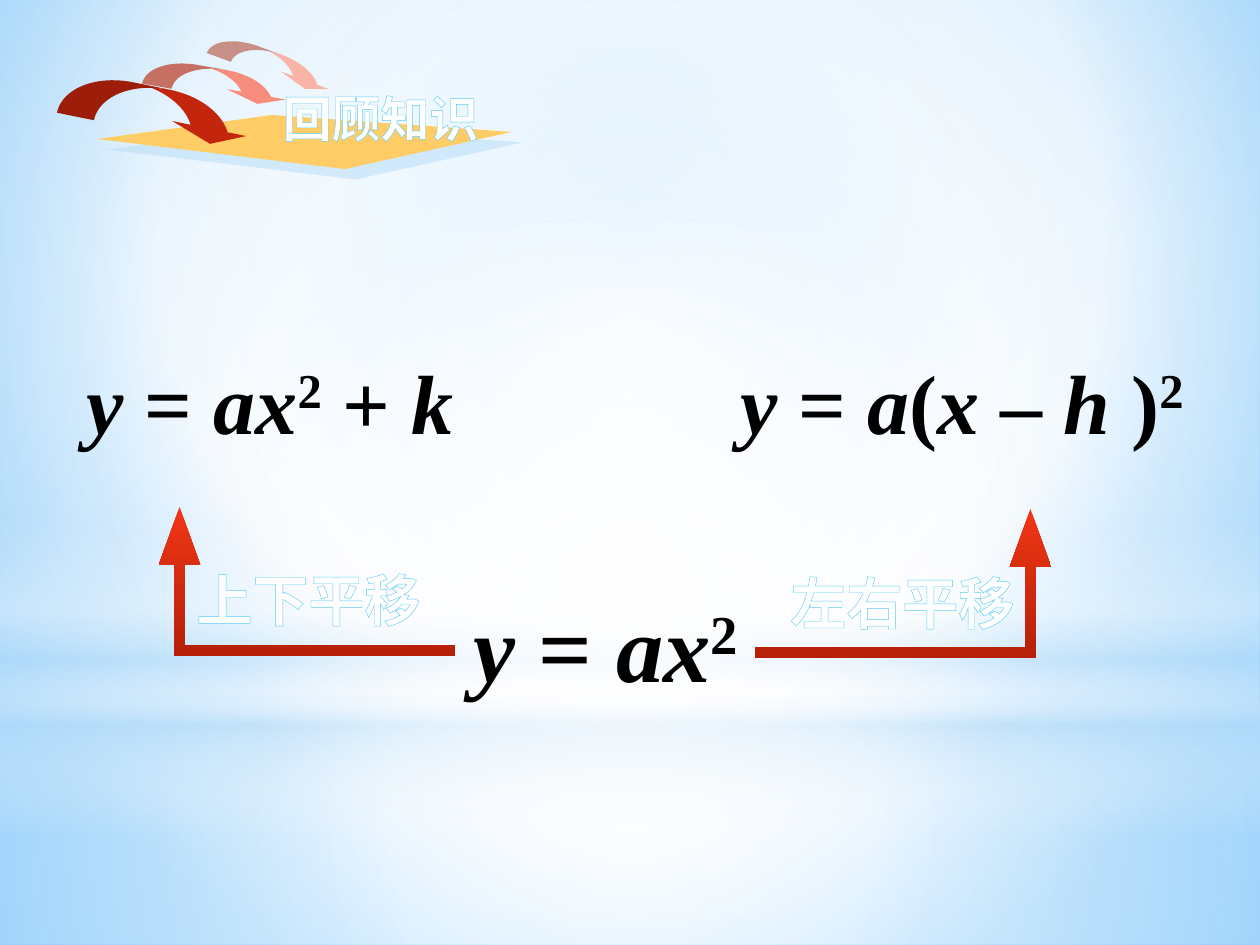
from dataclasses import dataclass

from lxml import etree
from pptx import Presentation
from pptx.dml.color import RGBColor
from pptx.enum.shapes import MSO_SHAPE
from pptx.enum.text import MSO_AUTO_SIZE, PP_ALIGN
from pptx.oxml.ns import qn
from pptx.util import Emu, Pt

PX = 914400 / 126
RECT, OVAL = MSO_SHAPE.RECTANGLE, MSO_SHAPE.OVAL
CURVED, BENT = MSO_SHAPE.CURVED_LEFT_ARROW, MSO_SHAPE.BENT_UP_ARROW
LEFT, CENTER, RIGHT = PP_ALIGN.LEFT, PP_ALIGN.CENTER, PP_ALIGN.RIGHT
FIT = MSO_AUTO_SIZE.SHAPE_TO_FIT_TEXT
MIDDLE = (50, 50, 50, 50)


@dataclass(frozen=True)
class Theme:
    """Colours, fonts and type sizes of the slide."""
    white: str = "FFFFFF"
    ink: str = "000000"
    sky: str = "9ED5FF"
    deep_sky: str = "5BB9FF"
    mist: str = "B4DCFA"
    outline: str = "5ECCF3"
    gold: str = "FFCC66"
    red: str = "C3260C"
    coral: str = "F78D7C"
    blush: str = "F9B3A7"
    arrow_top: str = "F03617"
    arrow_base: str = "B52007"
    math_font: str = "Times New Roman"
    text_font: str = "Noto Sans CJK SC"
    base_size: int = 54
    math_size: int = 48
    label_size: int = 32
    title_size: int = 28


T = Theme()


def px(*values):
    """Turn pixel lengths into EMU."""
    return [Emu(round(v * PX)) for v in values]


def child(parent, tag, **attrs):
    """Append an element with the given attributes."""
    el = etree.SubElement(parent, qn(tag))
    for name, value in attrs.items():
        el.set(name, str(value))
    return el


def add_color(parent, color, alpha=100):
    """Append an RGB colour with its opacity in percent."""
    clr = child(parent, "a:srgbClr", val=color)
    if alpha < 100:
        child(clr, "a:alpha", val=alpha * 1000)


def set_gradient(props, stops, focus=None):
    """Replace a solid fill by a radial or a vertical gradient."""
    grad = etree.Element(qn("a:gradFill"), rotWithShape="1")
    stop_list = child(grad, "a:gsLst")
    for pos, color, alpha in stops:
        add_color(child(stop_list, "a:gs", pos=pos * 1000), color, alpha)
    if focus:
        sides = {k: v * 1000 for k, v in zip("ltrb", focus)}
        child(child(grad, "a:path", path="circle"), "a:fillToRect", **sides)
    else:
        child(grad, "a:lin", ang=5400000, scaled=0)
    props.replace(props.find(qn("a:solidFill")), grad)


def set_plain(sp, color):
    """Give a shape a flat fill, no line and no shadow."""
    sp.shadow.inherit = False
    sp.fill.solid()
    sp.fill.fore_color.rgb = RGBColor.from_string(color)
    sp.line.fill.background()


def add_preset(shapes, kind, box, color=T.white, adjust=(), rotation=0):
    """Add a preset shape with a flat fill."""
    sp = shapes.add_shape(kind, *px(*box))
    set_plain(sp, color)
    for i, value in enumerate(adjust):
        sp.adjustments[i] = value
    sp.rotation = rotation
    return sp


def add_layer(shapes, kind, box, stops, focus=None):
    """Add a translucent gradient layer of the backdrop."""
    sp = add_preset(shapes, kind, box)
    set_gradient(sp.element.spPr, stops, focus)


def add_bent_arrow(shapes, box, flip=False):
    """Add a red arrow that turns upwards."""
    sp = add_preset(shapes, BENT, box, adjust=(0.072, 0.138, 0.386))
    set_gradient(sp.element.spPr, [(0, T.arrow_top, 100), (100, T.arrow_base, 100)])
    if flip:
        sp.element.spPr.find(qn("a:xfrm")).set("flipH", "1")


def add_plate(shapes):
    """Add the golden plate and its offset shadow."""
    builder = shapes.build_freeform(97, 139, scale=PX)
    builder.add_line_segments([(345, 169), (512, 132), (272, 115)], close=True)
    sp = builder.convert_to_shape()
    set_plain(sp, T.gold)
    effects = sp.element.spPr.find(qn("a:effectLst"))
    shadow = child(effects, "a:outerShdw", blurRad=0, dist=Pt(8.5),
                   dir=2700000, algn="ctr", rotWithShape=0)
    add_color(shadow, T.mist, 50)


def add_text(shapes, box, runs, size, font, color, align=LEFT, outline=None, wrap=True):
    """Add bold text; runs pair wording with 'i' (italic), 'sup' or ''."""
    tf = shapes.add_textbox(*px(*box)).text_frame
    tf.word_wrap = wrap
    tf.auto_size = FIT
    p = tf.paragraphs[0]
    p.alignment = align
    for text, style in runs:
        r = p.add_run()
        r.text = text
        r.font.size, r.font.name = Pt(size), font
        r.font.bold, r.font.italic = True, style == "i"
        r.font.color.rgb = RGBColor.from_string(color)
        props = r.font._element
        child(props, "a:ea", typeface=font)
        if style == "sup":
            props.set("baseline", "30000")
        if outline:
            line_color, width = outline
            ln = child(props, "a:ln", w=Pt(width))
            add_color(child(ln, "a:solidFill"), line_color)
            props.insert(0, ln)


def add_equation(shapes, box, tail, size=T.math_size, **options):
    """Add a formula that starts with y =."""
    add_text(shapes, box, [("y", "i"), (" = ", "")] + tail, size, T.math_font, T.ink, **options)


def add_label(shapes, box, text, size, align):
    """Add outlined white wording."""
    add_text(shapes, box, [(text, "")], size, T.text_font, T.white, align, (T.outline, 0.52))


def add_backdrop(slide):
    """Paint the background and its light layers."""
    slide.background.fill.solid()
    set_gradient(slide.element.find(".//" + qn("p:bgPr")),
                 [(0, T.sky, 100), (60, T.white, 100), (100, T.deep_sky, 100)],
                 (20, 10, 20, 60))
    shapes = slide.shapes
    add_layer(shapes, RECT, (0, 703, 1260, 242),
              [(0, T.white, 91), (37, T.white, 76), (100, T.mist, 79)], MIDDLE)
    add_layer(shapes, RECT, (0, 0, 1260, 703),
              [(0, T.white, 89), (48, T.white, 62), (100, T.mist, 79)], MIDDLE)
    add_layer(shapes, RECT, (0, 519, 1260, 315),
              [(0, T.white, 0), (29, T.white, 30), (45, T.mist, 40),
               (55, T.white, 26), (65, T.mist, 60), (100, T.white, 0)])
    add_layer(shapes, OVAL, (0, 220, 1260, 703),
              [(0, T.white, 100), (56, T.white, 0)], MIDDLE)


def add_heading(shapes):
    """Add the heading with its bouncing arrows."""
    group = shapes.add_group_shape().shapes
    add_preset(group, CURVED, (260, -1, 24, 130), T.blush, (1.07, 2.14, 0.33), 290)
    add_preset(group, CURVED, (203, 9, 28, 147), T.coral, (1.07, 2.14, 0.33), 280)
    add_plate(group)
    add_preset(group, CURVED, (134, 13, 45, 194), T.red, (0.84, 1.68, 0.33), 281.5)
    add_label(group, (256, 82, 249, 72), "回顾知识", T.title_size, CENTER)


def main():
    """Build and save the slide."""
    prs = Presentation()
    prs.slide_width, prs.slide_height = px(1260, 945)
    s = prs.slides.add_slide(prs.slide_layouts[6])
    shapes = s.shapes
    add_backdrop(s)
    square = [("ax", "i"), ("2", "sup")]
    add_equation(shapes, (461, 582, 343, 127), square, T.base_size, outline=(T.white, 0.75))
    add_equation(shapes, (74, 344, 407, 113), square + [(" + ", ""), ("k", "i")])
    add_equation(shapes, (728, 344, 472, 113),
                 [("a", "i"), ("(", ""), ("x", "i"), (" – ", ""), ("h", "i"),
                  (" )", ""), ("2", "sup")], wrap=False)
    add_label(shapes, (184, 559, 296, 81), "上下平移", T.label_size, LEFT)
    add_label(shapes, (740, 562, 287, 81), "左右平移", T.label_size, RIGHT)
    add_heading(shapes)
    add_bent_arrow(shapes, (159, 507, 296, 149), flip=True)
    add_bent_arrow(shapes, (755, 509, 296, 149))
    prs.save("out.pptx")


if __name__ == "__main__":
    main()
